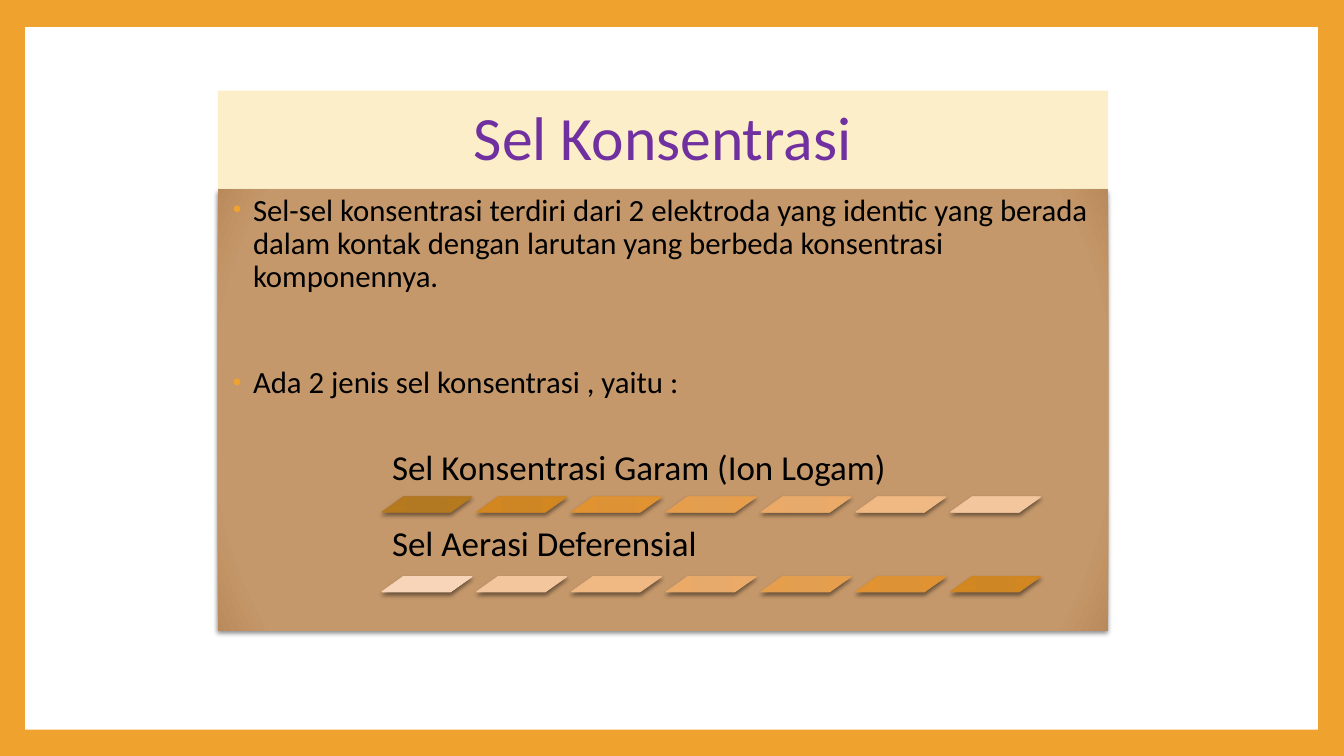
from lxml import etree
from pptx import Presentation
from pptx.dml.color import RGBColor
from pptx.enum.shapes import MSO_SHAPE as Shape
from pptx.enum.text import MSO_ANCHOR as Anchor, MSO_AUTO_SIZE as AutoSize, PP_ALIGN as Align
from pptx.oxml import parse_xml
from pptx.oxml.ns import nsdecls, qn
from pptx.util import Inches, Pt

FONT = "Calibri"
ORANGE = RGBColor(0xF0, 0xA2, 0x2E)
WHITE = RGBColor(0xFF, 0xFF, 0xFF)
CREAM = RGBColor(0xFB, 0xEE, 0xC9)
PURPLE = RGBColor(0x70, 0x30, 0xA0)
BLACK = RGBColor(0x00, 0x00, 0x00)

# Each gradient runs through three colours, at these percentages.
STOPS = (0, 90, 100)
BROWN = (RGBColor(0xC3, 0x98, 0x6D), RGBColor(0xC5, 0x98, 0x6B), RGBColor(0xB9, 0x8A, 0x5B))
DARK_TO_LIGHT = [
    (RGBColor(0xB2, 0x78, 0x22), RGBColor(0xB5, 0x79, 0x1E), RGBColor(0xAE, 0x6F, 0x12)),
    (RGBColor(0xCE, 0x86, 0x25), RGBColor(0xD2, 0x87, 0x21), RGBColor(0xCA, 0x7C, 0x13)),
    (RGBColor(0xDD, 0x92, 0x36), RGBColor(0xE1, 0x93, 0x32), RGBColor(0xD7, 0x87, 0x22)),
    (RGBColor(0xE3, 0x9E, 0x50), RGBColor(0xE6, 0x9E, 0x4C), RGBColor(0xDB, 0x90, 0x3B)),
    (RGBColor(0xE8, 0xAA, 0x6A), RGBColor(0xEB, 0xAA, 0x67), RGBColor(0xDE, 0x9B, 0x54)),
    (RGBColor(0xED, 0xB8, 0x84), RGBColor(0xF0, 0xB8, 0x82), RGBColor(0xE1, 0xA6, 0x6E)),
    (RGBColor(0xF2, 0xC6, 0x9F), RGBColor(0xF4, 0xC6, 0x9D), RGBColor(0xE3, 0xB3, 0x89)),
    (RGBColor(0xF6, 0xD5, 0xBA), RGBColor(0xF8, 0xD5, 0xB9), RGBColor(0xE5, 0xC1, 0xA4)),
]

BULLETS = [
    "Sel-sel konsentrasi terdiri dari 2 elektroda yang identic yang berada "
    "dalam kontak dengan larutan yang berbeda konsentrasi komponennya.",
    "Ada 2 jenis sel konsentrasi , yaitu :",
]


def place(shape, left, top, width, height):
    shape.left, shape.top = Inches(left), Inches(top)
    shape.width, shape.height = Inches(width), Inches(height)


def fill_solid(shape, color):
    shape.fill.solid()
    shape.fill.fore_color.rgb = color


def fill_with_glow(shape, colors):
    """Give the shape a circular gradient and a soft shadow below it."""
    shape.fill.gradient()
    stops = "".join(
        f'<a:gs pos="{percent * 1000}"><a:srgbClr val="{color}"/></a:gs>'
        for percent, color in zip(STOPS, colors)
    )
    gradient = shape.element.spPr.find(qn("a:gradFill"))
    gradient.getparent().replace(gradient, parse_xml(
        f'<a:gradFill {nsdecls("a")} rotWithShape="1"><a:gsLst>{stops}</a:gsLst>'
        '<a:path path="circle"><a:fillToRect l="100000" t="100000" r="100000" b="100000"/>'
        '</a:path></a:gradFill>'
    ))
    shape.shadow.inherit = False
    shape.element.spPr.find(qn("a:effectLst")).append(parse_xml(
        f'<a:outerShdw {nsdecls("a")} blurRad="{Pt(3)}" dist="{Pt(2)}" dir="5400000" '
        'rotWithShape="0"><a:srgbClr val="000000"><a:alpha val="45000"/></a:srgbClr>'
        '</a:outerShdw>'
    ))


def format_text(paragraph, size, color):
    paragraph.line_spacing = 0.9
    for run in paragraph.runs:
        run.font.name = FONT
        run.font.size = Pt(size)
        run.font.color.rgb = color


def add_bullet(paragraph):
    properties = paragraph._p.get_or_add_pPr()
    properties.set("marL", str(Inches(0.25)))
    properties.set("indent", str(Inches(-0.2)))
    color = etree.SubElement(properties, qn("a:buClr"))
    etree.SubElement(color, qn("a:srgbClr"), val=str(ORANGE))
    etree.SubElement(properties, qn("a:buSzPct"), val="80000")
    etree.SubElement(properties, qn("a:buFont"), typeface="Arial")
    etree.SubElement(properties, qn("a:buChar"), char="•")


def add_white_panel(slide, left, top, width, height):
    """Add the white panel behind the title and body."""
    panel = slide.shapes.add_shape(Shape.RECTANGLE, 0, 0, 0, 0)
    place(panel, left, top, width, height)
    fill_solid(panel, WHITE)
    panel.line.fill.background()
    panel.shadow.inherit = False
    slide.shapes.title.element.addprevious(panel.element)


def fill_title(title, left, top, width, height):
    place(title, left, top, width, height)
    fill_solid(title, CREAM)
    frame = title.text_frame
    frame.text = "Sel Konsentrasi"
    frame.auto_size = AutoSize.NONE
    frame.vertical_anchor = Anchor.MIDDLE
    frame.paragraphs[0].alignment = Align.CENTER
    format_text(frame.paragraphs[0], 44, PURPLE)


def fill_body(body, left, top, width, height):
    place(body, left, top, width, height)
    fill_with_glow(body, BROWN)
    frame = body.text_frame
    frame.text = "\n".join(BULLETS)
    frame.auto_size = AutoSize.NONE
    frame.vertical_anchor = Anchor.TOP
    for paragraph, space_before in zip(frame.paragraphs, (14, 52)):
        format_text(paragraph, 22, BLACK)
        paragraph.space_before = Pt(space_before)
        add_bullet(paragraph)


def add_cell_type(slide, left, top, name, bar_offset, shades):
    """Add the name of a cell type and the row of slanted bars below it."""
    label = slide.shapes.add_textbox(0, 0, 0, 0)
    place(label, left, top, 6.66, 0.61)
    frame = label.text_frame
    frame.word_wrap = True
    frame.vertical_anchor = Anchor.BOTTOM
    frame.margin_left = frame.margin_right = Inches(0.1)
    frame.margin_top = frame.margin_bottom = Inches(0.1)
    frame.text = name
    format_text(frame.paragraphs[0], 25, BLACK)

    for column, shade in enumerate(shades):
        bar = slide.shapes.add_shape(Shape.PARALLELOGRAM, 0, 0, 0, 0)
        place(bar, left + column * 0.94, top + bar_offset, 0.89, 0.15)
        bar.adjustments[0] = 1.41
        fill_with_glow(bar, shade)
        bar.line.color.rgb = shade[0]
        bar.line.width = Pt(0.79)


def main():
    presentation = Presentation()
    presentation.slide_width, presentation.slide_height = Inches(13.33), Inches(7.5)
    slide = presentation.slides.add_slide(presentation.slide_layouts[1])
    slide.background.fill.solid()
    slide.background.fill.fore_color.rgb = ORANGE

    add_white_panel(slide, 0.25, 0.27, 12.82, 6.97)
    fill_title(slide.shapes.title, 2.16, 0.9, 8.83, 0.98)
    fill_body(slide.placeholders[1], 2.16, 1.88, 8.83, 4.38)
    add_cell_type(slide, 3.79, 4.33, "Sel Konsentrasi Garam (Ion Logam)", 0.6,
                  DARK_TO_LIGHT[:-1])
    add_cell_type(slide, 3.79, 5.09, "Sel Aerasi Deferensial", 0.63,
                  DARK_TO_LIGHT[:0:-1])
    presentation.save("out.pptx")


if __name__ == "__main__":
    main()
